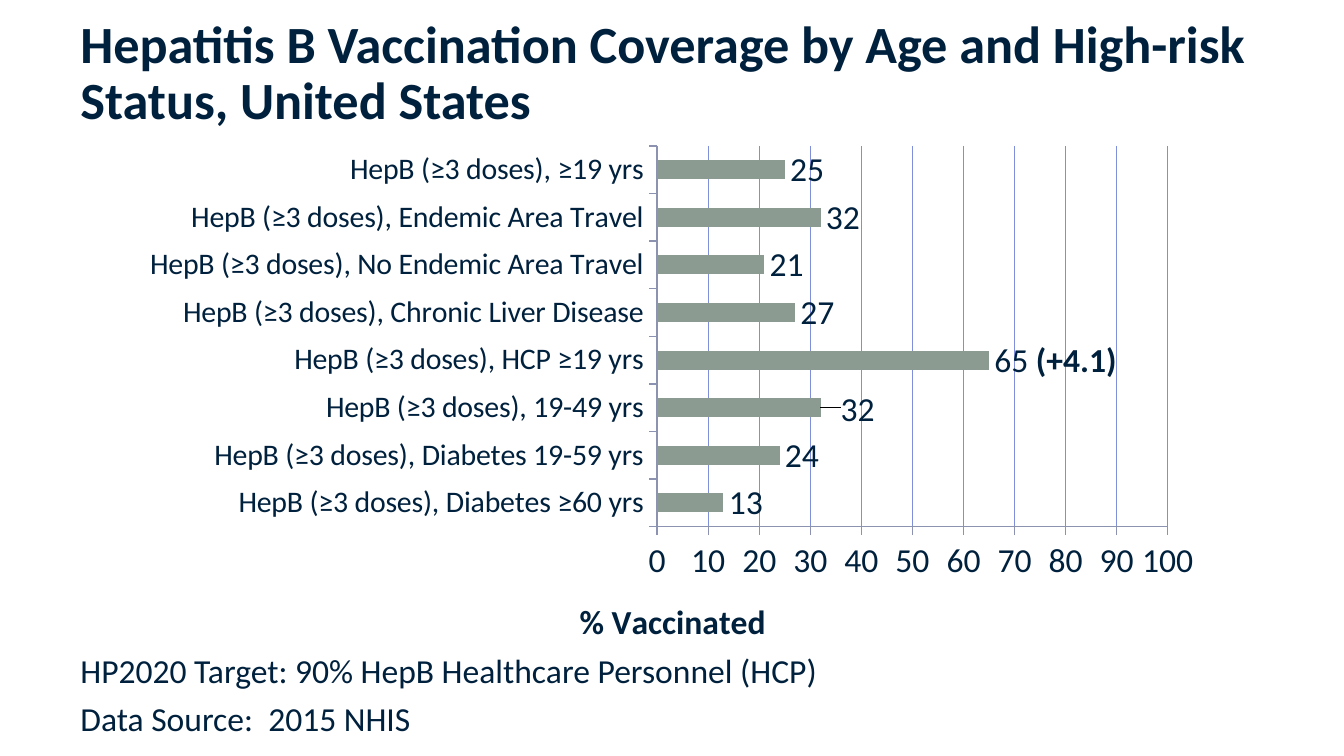
from pptx import Presentation
from pptx.chart.data import CategoryChartData
from pptx.dml.color import RGBColor
from pptx.enum.chart import XL_CHART_TYPE, XL_LABEL_POSITION, XL_TICK_MARK
from pptx.enum.text import MSO_ANCHOR
from pptx.oxml import parse_xml
from pptx.oxml.ns import nsdecls
from pptx.util import Cm, Pt

COVERAGE = {
    "Diabetes ≥60 yrs": 13,
    "Diabetes 19-59 yrs": 24,
    "19-49 yrs": 32,
    "HCP ≥19 yrs": 65,
    "Chronic Liver Disease": 27,
    "No Endemic Area Travel": 21,
    "Endemic Area Travel": 32,
    "≥19 yrs": 25,
}
GROUPS = list(COVERAGE)
CHART_BOX = (2.44, 2.57, 20.55, 10.21)
HIDE_LEADER_LINES = f"""
<c:extLst {nsdecls('c')}>
  <c:ext uri="{{CE6537A1-D6FC-4f65-9D91-7224C49458BB}}"
      xmlns:c15="http://schemas.microsoft.com/office/drawing/2012/chart">
    <c15:showLeaderLines val="0"/>
  </c:ext>
</c:extLst>"""


def colour(hex_text):
    return RGBColor.from_string(hex_text)


def format_font(font, size=18, bold=False, name="Calibri", fill="00213D"):
    font.name = name
    font.size = Pt(size)
    font.bold = bold
    font.color.rgb = colour(fill)


def add_run(paragraph, text, **style):
    run = paragraph.add_run()
    run.text = text
    format_font(run.font, **style)


def place(parent, lengths, after=None, **modes):
    """Lay out a chart part; lengths (x, y, w, h) are centimetres in the chart."""
    sizes = CHART_BOX[2:] * 2
    fractions = {key: length / size for key, length, size in zip("xywh", lengths, sizes)}
    children = "".join(
        f'<c:{key} val="{value}"/>' for key, value in (modes | fractions).items()
    )
    layout = parse_xml(
        f"<c:layout {nsdecls('c')}><c:manualLayout>{children}</c:manualLayout></c:layout>"
    )
    for old in parent.xpath("./c:layout"):
        parent.remove(old)
    parent.insert(0 if after is None else parent.index(after) + 1, layout)


class SlideBuilder:
    grid_colour = "7F8FDB"
    axis_colour = "8B93B0"
    bar_colour = "8B9B92"

    def __init__(self, presentation):
        self.slide = presentation.slides.add_slide(presentation.slide_layouts[6])

    def text(self, box, lines, anchor=MSO_ANCHOR.TOP, line_spacing=None, gap=0, **style):
        frame = self.slide.shapes.add_textbox(*map(Cm, box)).text_frame
        frame.word_wrap = True
        frame.vertical_anchor = anchor
        for index, line in enumerate(lines):
            paragraph = frame.add_paragraph() if index else frame.paragraphs[0]
            if index:
                paragraph.space_before = Pt(gap)
            if line_spacing:
                paragraph.line_spacing = Pt(line_spacing)
            add_run(paragraph, line, **style)

    def bar_chart(self, box, categories, values, axis_title):
        data = CategoryChartData()
        data.categories = categories
        data.add_series("Series 1", values)
        chart = self.slide.shapes.add_chart(
            XL_CHART_TYPE.BAR_CLUSTERED, *map(Cm, box), data
        ).chart
        chart.has_legend = False
        chart.has_title = False
        format_font(chart.font)
        self.axes(chart, axis_title)

        plot = chart.plots[0]
        plot.gap_width = 150
        plot.vary_by_categories = False
        series = plot.series[0]
        series.format.fill.solid()
        series.format.fill.fore_color.rgb = colour(self.bar_colour)
        labels = series.data_labels
        labels.show_value = True
        labels.position = XL_LABEL_POSITION.OUTSIDE_END
        format_font(labels.font)
        chart.element.xpath(".//c:ser/c:dLbls")[0].append(parse_xml(HIDE_LEADER_LINES))
        place(
            chart.element.xpath(".//c:plotArea")[0],
            (9.98, 0.19, 9.65, 7.2),
            layoutTarget="inner", xMode="edge", yMode="edge",
        )
        return chart

    def axes(self, chart, axis_title):
        category_axis, value_axis = chart.category_axis, chart.value_axis
        for axis, size in ((category_axis, 16), (value_axis, 18)):
            axis.major_tick_mark = XL_TICK_MARK.OUTSIDE
            axis.format.line.color.rgb = colour(self.axis_colour)
            axis.format.line.width = Pt(0.75)
            format_font(axis.tick_labels.font, size=size)
        category_axis.has_major_gridlines = False
        value_axis.minimum_scale = 0
        value_axis.maximum_scale = 100
        value_axis.major_unit = 10
        value_axis.has_major_gridlines = True
        grid = value_axis.major_gridlines.format.line
        grid.color.rgb = colour(self.grid_colour)
        grid.width = Pt(0.75)
        add_run(value_axis.axis_title.text_frame.paragraphs[0], axis_title, bold=True)
        title = chart.element.xpath(".//c:valAx/c:title")[0]
        place(title, (8.4, 8.63), after=title.xpath("./c:tx")[0],
              xMode="edge", yMode="edge")

    def annotate_point(self, chart, index, value, note):
        label = chart.plots[0].series[0].points[index].data_label
        paragraph = label.text_frame.paragraphs[0]
        add_run(paragraph, f"{value} ")
        add_run(paragraph, note, bold=True)
        label.position = XL_LABEL_POSITION.OUTSIDE_END

    def shift_label(self, chart, index, offset):
        label = chart.plots[0].series[0].points[index].data_label
        label.position = XL_LABEL_POSITION.OUTSIDE_END
        format_font(label.font)
        element = chart.element.xpath(f".//c:dLbl[c:idx/@val='{index}']")[0]
        place(element, offset, after=element.xpath("./c:idx")[0])


def main():
    presentation = Presentation()
    presentation.slide_width = Cm(25.4)
    presentation.slide_height = Cm(14.29)
    builder = SlideBuilder(presentation)

    builder.text(
        (1.27, 0.2, 22.86, 2.39),
        ["Hepatitis B Vaccination Coverage by Age and High-risk Status, United States"],
        anchor=MSO_ANCHOR.BOTTOM, line_spacing=30, size=28, bold=True,
    )
    chart = builder.bar_chart(
        CHART_BOX,
        [f"HepB (≥3 doses), {group}" for group in GROUPS],
        COVERAGE.values(),
        "% Vaccinated",
    )
    builder.shift_label(chart, GROUPS.index("19-49 yrs"), (0.28, 0.03))
    healthcare = "HCP ≥19 yrs"
    builder.annotate_point(
        chart, GROUPS.index(healthcare), COVERAGE[healthcare], "(+4.1)"
    )
    builder.text(
        (1.27, 12.17, 22.86, 1.7),
        ["HP2020 Target: 90% HepB Healthcare Personnel (HCP)", "Data Source:  2015 NHIS"],
        gap=3.6,
    )
    presentation.save("out.pptx")


if __name__ == "__main__":
    main()
